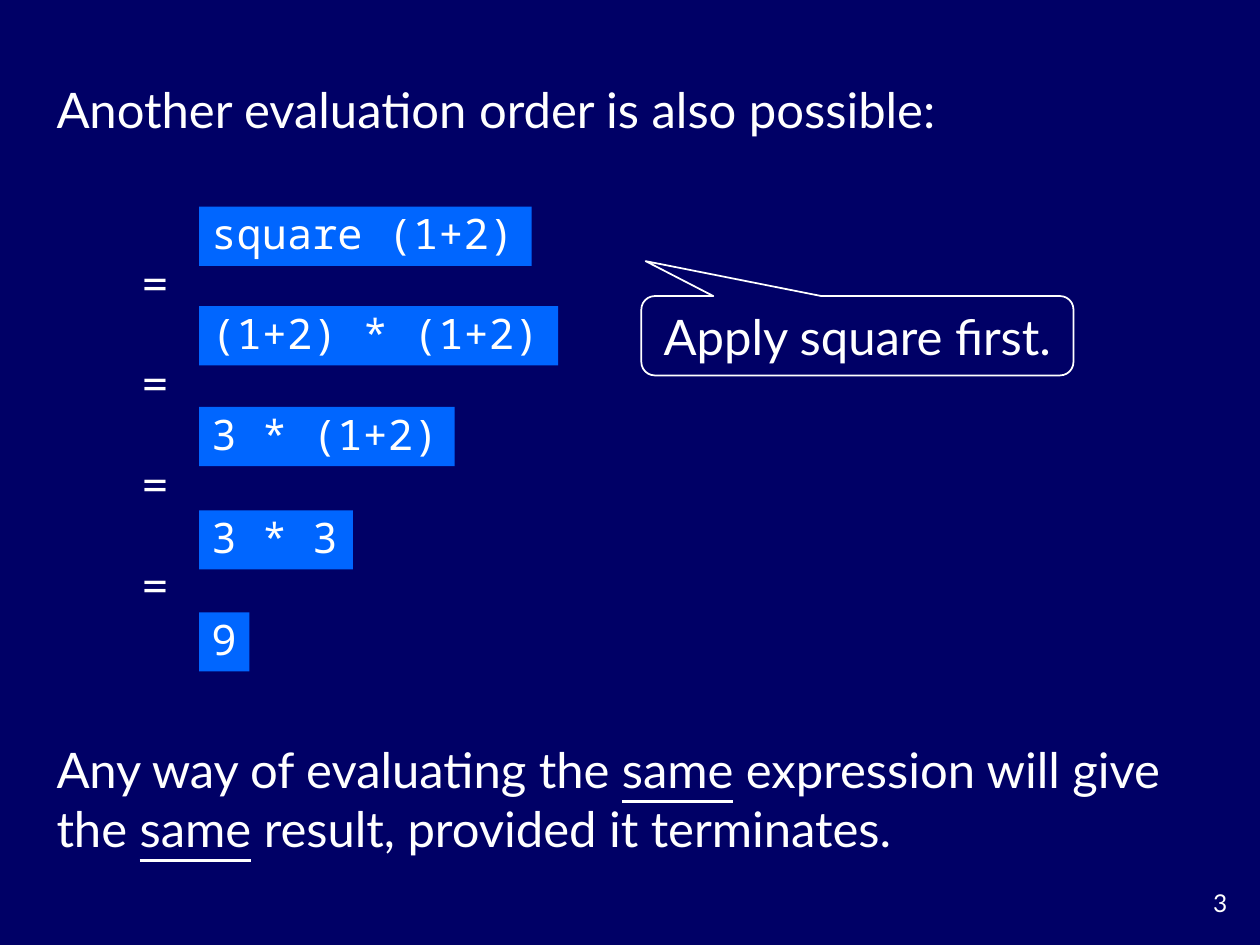
from pptx import Presentation
from pptx.dml.color import RGBColor
from pptx.enum import shapes, text
from pptx.util import Inches, Pt

NAVY = RGBColor(0x00, 0x00, 0x66)
BLUE = RGBColor(0x00, 0x66, 0xFF)
WHITE = RGBColor(0xFF, 0xFF, 0xFF)
LEFT, CENTER, RIGHT = text.PP_ALIGN.LEFT, text.PP_ALIGN.CENTER, text.PP_ALIGN.RIGHT
BODY = {"name": "Lato", "size": Pt(28)}
CODE = {"name": "Noto Sans Mono", "size": Pt(24)}
NUMBER = {"name": "Lato", "size": Pt(14)}
FITTED = {"vertical_anchor": text.MSO_ANCHOR.MIDDLE,
          "auto_size": text.MSO_AUTO_SIZE.SHAPE_TO_FIT_TEXT}
WRAPPED = {**FITTED, "word_wrap": True}
UNWRAPPED = {**FITTED, "word_wrap": False}
TOP = {"vertical_anchor": text.MSO_ANCHOR.TOP, "word_wrap": True}

prs = Presentation()
prs.slide_width, prs.slide_height = Inches(10), Inches(7.5)
s = prs.slides.add_slide(prs.slide_layouts[6])
s.background.fill.solid()
s.background.fill.fore_color.rgb = NAVY


def add_item(box, runs, font, frame, align=LEFT, spacing=None, kind=None):
    box = [Inches(v) for v in box]
    if kind is None:
        sp = s.shapes.add_textbox(*box)
    else:
        sp = s.shapes.add_shape(kind, *box)
        sp.shadow.inherit = False
        sp.fill.background()
        sp.line.fill.background()
    tf = sp.text_frame
    for key, value in frame.items():
        setattr(tf, key, value)
    p = tf.paragraphs[0]
    p.alignment = align
    p.line_spacing = spacing
    for words in runs:
        r = p.add_run()
        r.text = words
        for key, value in font.items():
            setattr(r.font, key, value)
        r.font.color.rgb = WHITE
        if words == "same":
            r.font.underline = True
    return sp


add_item((9.17, 7, 0.67, 0.33), ["3"], NUMBER, TOP, RIGHT)
add_item((0.35, 0.58, 9.29, 0.57), ["Another evaluation order is also possible:"], BODY, WRAPPED)

steps = [
    ("square (1+2)", 1.64, 2.64),
    ("(1+2) * (1+2)", 2.43, 2.85),
    ("3 * (1+2)", 3.23, 2.03),
    ("3 * 3", 4.05, 1.22),
    ("9", 4.86, 0.4),
]
for i, (code, top, width) in enumerate(steps):
    sp = add_item((1.58, top, width, 0.47), [code], CODE, UNWRAPPED,
                  spacing=0.9, kind=shapes.MSO_SHAPE.RECTANGLE)
    sp.fill.solid()
    sp.fill.fore_color.rgb = BLUE
    if i:
        add_item((0.99, 1.95 + 0.8 * (i - 1), 0.48, 0.57), ["="], BODY, UNWRAPPED, CENTER)

add_item((0.35, 5.82, 9.29, 1.04),
         ["Any way of evaluating the ", "same", " expression will give the ", "same",
          " result, provided it terminates."], BODY, WRAPPED)

sp = add_item((5.09, 2.35, 3.43, 0.63), ["Apply square first."], BODY, WRAPPED, CENTER,
              kind=shapes.MSO_SHAPE.ROUNDED_RECTANGULAR_CALLOUT)
sp.line.color.rgb = WHITE
sp.line.width = Pt(1)
for i, value in enumerate((-0.49, -0.94, 0.17)):
    sp.adjustments[i] = value

prs.save("out.pptx")
